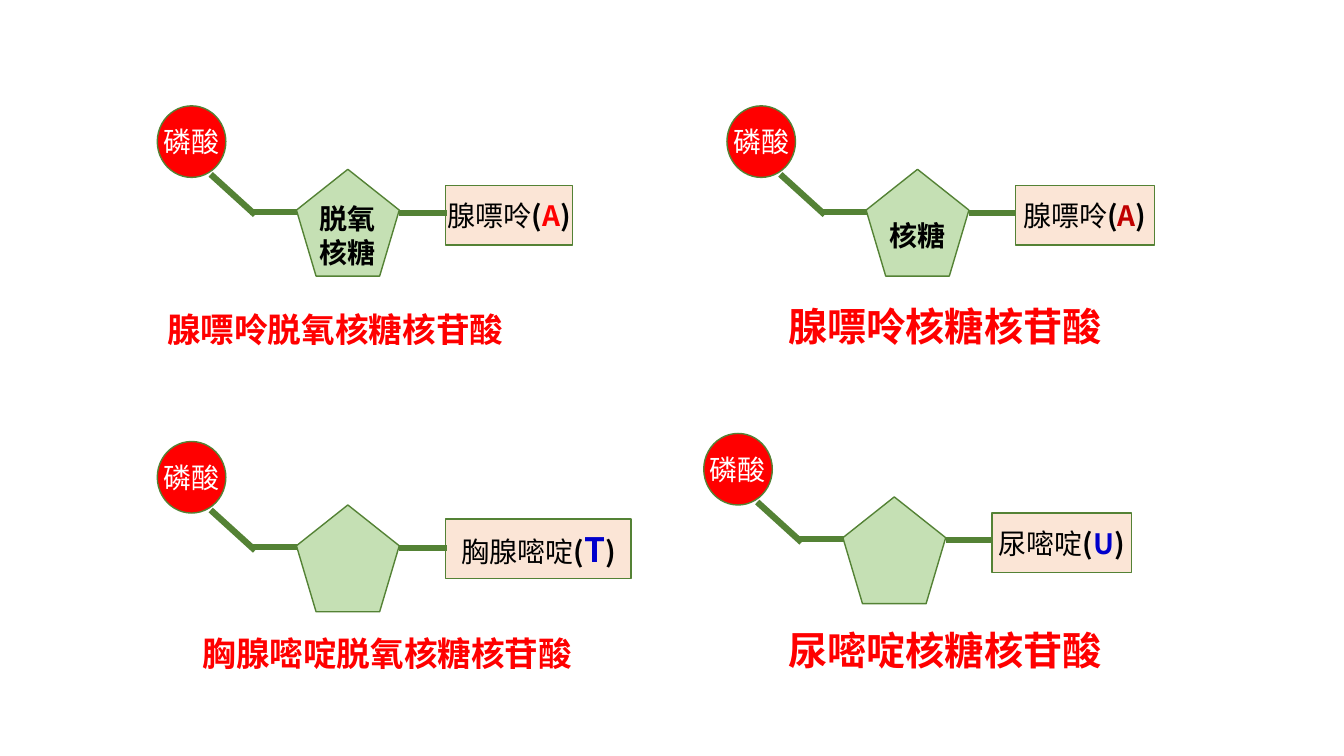
"""Builds a slide comparing four nucleotides of DNA and RNA."""
from lxml import etree
from pptx import Presentation
from pptx.dml.color import RGBColor
from pptx.enum import shapes, text
from pptx.oxml import ns
from pptx.util import Inches, Pt

COLORS = {
    "red": "FF0000",
    "dark_red": "C00000",
    "blue": "0000CC",
    "black": "000000",
    "white": "FFFFFF",
    "sugar": "C5E0B4",
    "base": "FBE5D6",
    "bond": "548235",
}


class NucleotideSlide:
    font = "Noto Sans CJK SC"
    size = 20

    def __init__(self, presentation):
        self.slide = presentation.slides.add_slide(presentation.slide_layouts[6])

    def color(self, name):
        return RGBColor.from_string(COLORS[name])

    def format_run(self, run, color, bold=False, size=None):
        run.font.size = Pt(size or self.size)
        run.font.bold = bold
        run.font.color.rgb = self.color(color)
        run.font.name = self.font
        properties = run._r.get_or_add_rPr()
        etree.SubElement(properties, ns.qn("a:ea"), typeface=self.font)

    def block(self, group, kind, left, top, width, height, fill):
        shape = group.shapes.add_shape(
            kind, Inches(left), Inches(top), Inches(width), Inches(height))
        shape.shadow.inherit = False
        shape.fill.solid()
        shape.fill.fore_color.rgb = self.color(fill)
        shape.line.color.rgb = self.color("bond")
        shape.line.width = Pt(1)
        frame = shape.text_frame
        frame.word_wrap = False
        frame.vertical_anchor = text.MSO_ANCHOR.MIDDLE
        return shape

    def label(self, shape, wording, color, bold=False):
        shape.text_frame.text = wording
        for paragraph in shape.text_frame.paragraphs:
            paragraph.alignment = text.PP_ALIGN.CENTER
            for run in paragraph.runs:
                self.format_run(run, color, bold)

    def base_label(self, shape, name, letter, color, size):
        self.label(shape, name, "black")
        paragraph = shape.text_frame.paragraphs[0]
        for wording, tint, points in (
                ("(", "black", None), (letter, color, size), (")", "black", None)):
            run = paragraph.add_run()
            run.text = wording
            self.format_run(run, tint, True, points)

    def bond(self, group, left, top, right, bottom):
        line = group.shapes.add_connector(
            shapes.MSO_CONNECTOR.STRAIGHT,
            Inches(left), Inches(top), Inches(right), Inches(bottom))
        line.line.color.rgb = self.color("bond")
        line.line.width = Pt(4.5)
        etree.SubElement(line._element.spPr, ns.qn("a:effectLst"))

    def nucleotide(self, left, top, sugar, base, letter, letter_color,
                   base_width, base_drop=0.79, letter_size=None):
        group = self.slide.shapes.add_group_shape()
        kinds = shapes.MSO_SHAPE
        pentagon = self.block(group, kinds.REGULAR_PENTAGON,
                              left + 1.38, top + 0.63, 1.02, 1.06, "sugar")
        if sugar:
            self.label(pentagon, sugar, "black", True)
        box = self.block(group, kinds.RECTANGLE,
                         left + 2.86, top + base_drop, base_width, 0.59, "base")
        self.base_label(box, base, letter, letter_color, letter_size)
        phosphate = self.block(group, kinds.OVAL, left, top, 0.68, 0.71, "red")
        self.label(phosphate, "磷酸", "white")
        for x1, y1, x2, y2 in ((2.4, 1.06, 2.87, 1.06),
                               (0.53, 0.68, 0.97, 1.08),
                               (0.92, 1.05, 1.39, 1.05)):
            self.bond(group, left + x1, top + y1, left + x2, top + y2)

    def caption(self, wording, left, top, width, height, size, wrap=True):
        box = self.slide.shapes.add_textbox(
            Inches(left), Inches(top), Inches(width), Inches(height))
        frame = box.text_frame
        frame.word_wrap = wrap
        frame.auto_size = text.MSO_AUTO_SIZE.SHAPE_TO_FIT_TEXT
        frame.text = wording
        self.format_run(frame.paragraphs[0].runs[0], "red", True, size)


def main():
    presentation = Presentation()
    presentation.slide_width = Inches(13.33)
    presentation.slide_height = Inches(7.5)
    slide = NucleotideSlide(presentation)

    slide.caption("腺嘌呤脱氧核糖核苷酸", 1.56, 3.02, 4.03, 0.5, 24)
    slide.caption("胸腺嘧啶脱氧核糖核苷酸", 1.91, 6.23, 4.13, 0.5, 24)
    slide.nucleotide(1.56, 1.05, "脱氧\n核糖", "腺嘌呤", "A", "red", 1.26)
    slide.nucleotide(1.56, 4.38, None, "胸腺嘧啶", "T", "blue", 1.84,
                     base_drop=0.77, letter_size=24)
    slide.nucleotide(7.21, 1.05, "核糖", "腺嘌呤", "A", "dark_red", 1.38)
    slide.caption("腺嘌呤核糖核苷酸", 7.72, 2.95, 3.33, 0.57, 28, wrap=False)
    slide.nucleotide(6.98, 4.3, None, "尿嘧啶", "U", "blue", 1.38)
    slide.caption("尿嘧啶核糖核苷酸", 7.72, 6.16, 3.73, 0.57, 28)

    presentation.save("out.pptx")


if __name__ == "__main__":
    main()
